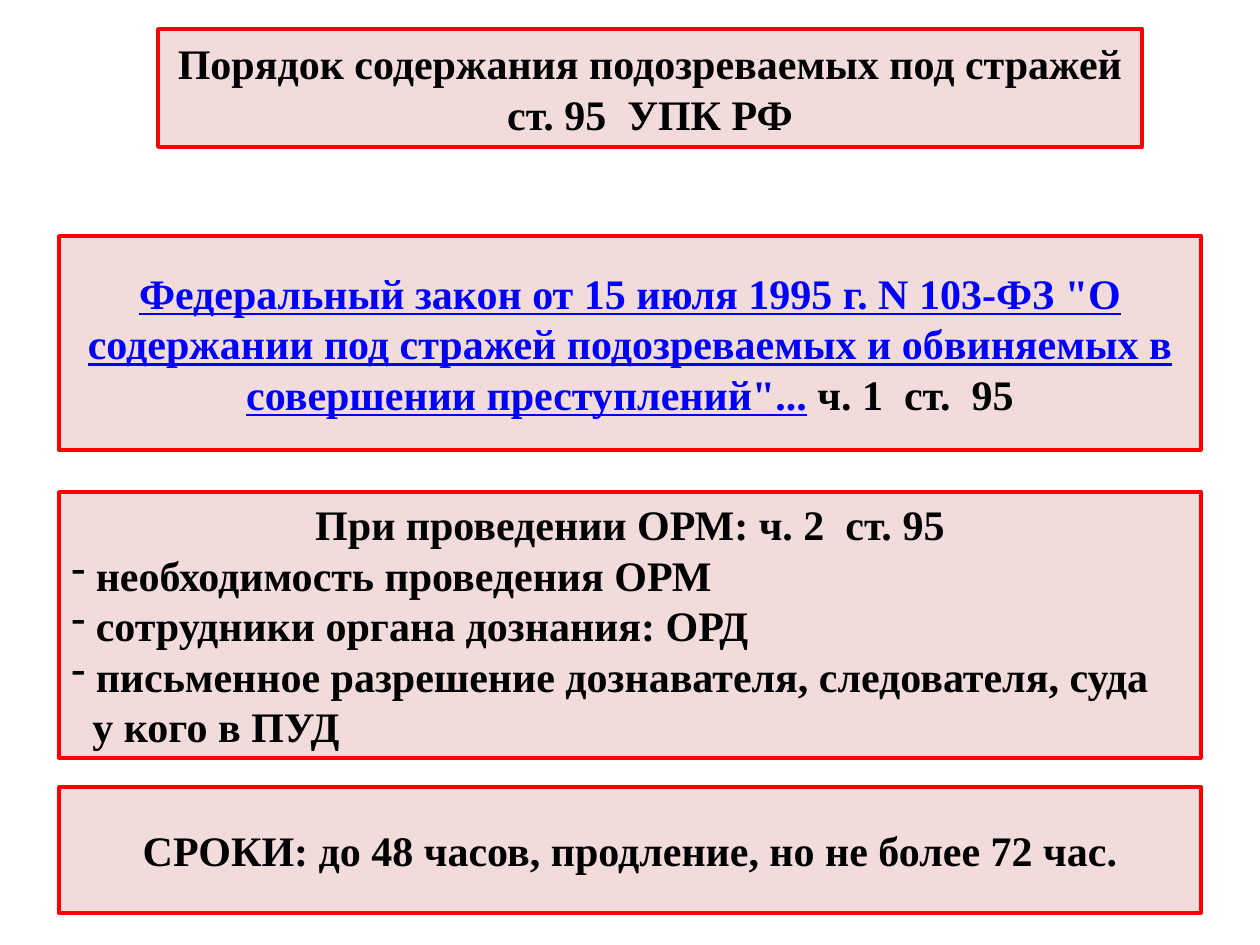
import dataclasses

import pptx
import pptx.enum.shapes
import pptx.enum.text
import pptx.oxml
import pptx.oxml.ns
import pptx.util
from pptx.dml.color import RGBColor

PX = 914400 / 126
ALIGN = pptx.enum.text.PP_ALIGN


def px(count):
    return pptx.util.Emu(round(count * PX))


@dataclasses.dataclass(frozen=True)
class Theme:
    font: str = "Times New Roman"
    size: int = 24
    line_width: int = 2
    fill: RGBColor = RGBColor(0xF2, 0xDC, 0xDB)
    border: RGBColor = RGBColor(0xFF, 0x00, 0x00)
    text: RGBColor = RGBColor(0x00, 0x00, 0x00)
    reference: RGBColor = RGBColor(0x00, 0x00, 0xFF)


class Page:
    def __init__(self, deck, theme):
        self.theme = theme
        self.slide = deck.slides.add_slide(deck.slide_layouts[5])

    def frame(self, shape):
        """Give a shape the common fill, border and text layout."""
        shape.fill.solid()
        shape.fill.fore_color.rgb = self.theme.fill
        shape.line.color.rgb = self.theme.border
        shape.line.width = pptx.util.Pt(self.theme.line_width)
        box = shape.text_frame
        box.word_wrap = True
        box.auto_size = pptx.enum.text.MSO_AUTO_SIZE.NONE
        box.vertical_anchor = pptx.enum.text.MSO_ANCHOR.MIDDLE
        return box

    def line_of_text(self, para, text, align=ALIGN.CENTER):
        para.alignment = align
        font = para.font
        font.name = self.theme.font
        font.size = pptx.util.Pt(self.theme.size)
        font.bold = True
        font.color.rgb = self.theme.text
        span = para.add_run()
        span.text = text
        return span

    def title(self, left, top, width, height, text):
        shape = self.slide.shapes.title
        shape.left, shape.top = px(left), px(top)
        shape.width, shape.height = px(width), px(height)
        self.line_of_text(self.frame(shape).paragraphs[0], text)

    def panel(self, left, top, width, height):
        shape = self.slide.shapes.add_shape(
            pptx.enum.shapes.MSO_SHAPE.RECTANGLE,
            px(left), px(top), px(width), px(height))
        shape.shadow.inherit = False
        return self.frame(shape)

    def reference(self, para, text, tail):
        """Add an underlined reference followed by plain text."""
        span = self.line_of_text(para, text)
        span.font.underline = True
        span.font.color.rgb = self.theme.reference
        para.add_run().text = tail

    def dash_item(self, box, text):
        para = box.add_paragraph()
        self.line_of_text(para, text, ALIGN.LEFT)
        bullet = pptx.oxml.parse_xml(
            f'<a:buChar {pptx.oxml.ns.nsdecls("a")} char="-"/>')
        para._p.get_or_add_pPr().insert(0, bullet)

    def indented(self, box, text, indent):
        para = box.add_paragraph()
        self.line_of_text(para, text, ALIGN.LEFT)
        para._p.get_or_add_pPr().set("marL", str(px(indent)))


def main():
    deck = pptx.Presentation()
    deck.slide_width, deck.slide_height = px(1260), px(945)
    page = Page(deck, Theme())
    left, width = 59, 1142

    page.title(158, 29, 984, 118,
               "Порядок содержания подозреваемых под стражей ст. 95  УПК РФ")

    law = page.panel(left, 236, width, 214)
    page.reference(
        law.paragraphs[0],
        'Федеральный закон от 15 июля 1995 г. N 103-ФЗ "О содержании под стражей '
        'подозреваемых и обвиняемых в совершении преступлений"...',
        " ч. 1  ст.  95")

    conditions = page.panel(left, 492, width, 266)
    page.line_of_text(conditions.paragraphs[0],
                      "При проведении ОРМ: ч. 2  ст. 95")
    for item in (" необходимость проведения ОРМ",
                 " сотрудники органа дознания: ОРД",
                 " письменное разрешение дознавателя, следователя, суда"):
        page.dash_item(conditions, item)
    page.indented(conditions, "у кого в ПУД", 21)

    terms = page.panel(left, 787, width, 126)
    page.line_of_text(terms.paragraphs[0],
                      "СРОКИ: до 48 часов, продление, но не более 72 час.")

    deck.save("out.pptx")


if __name__ == "__main__":
    main()
